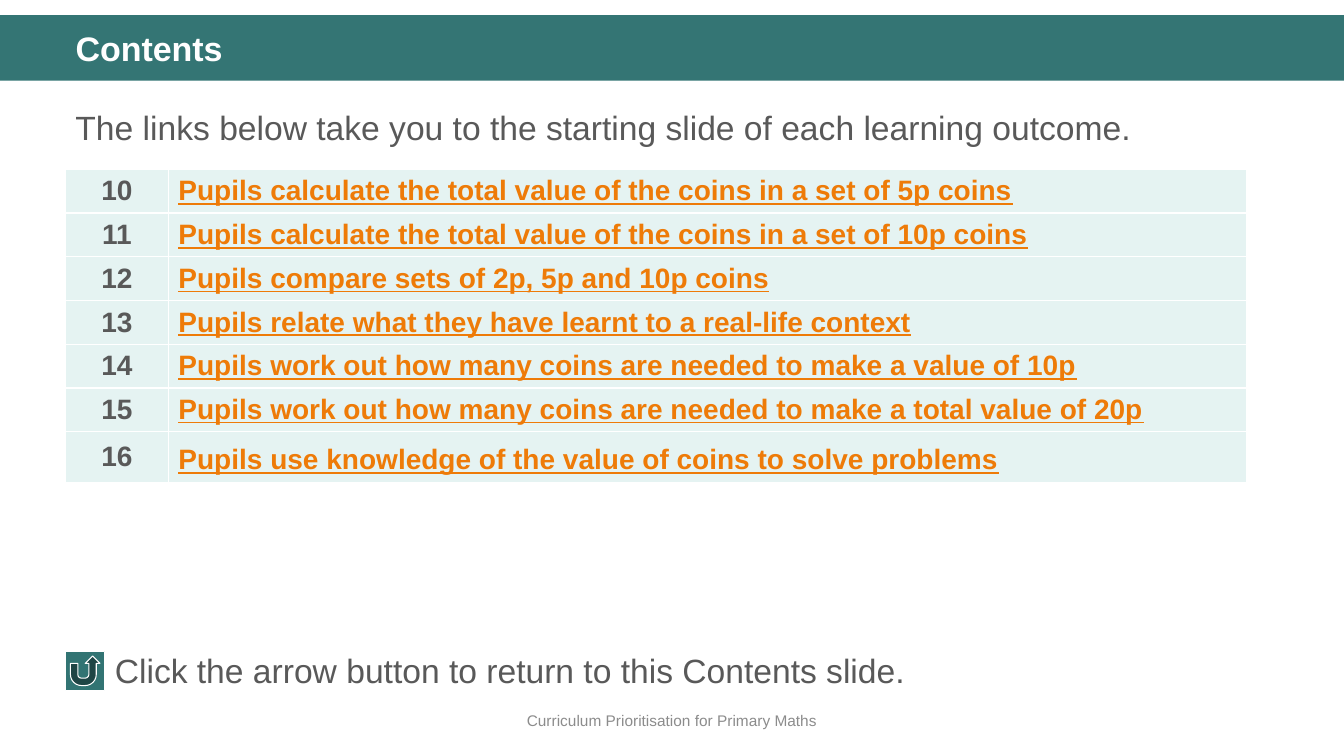
from dataclasses import dataclass

from lxml import etree
from pptx import Presentation
from pptx import util as u
from pptx.dml.color import RGBColor
from pptx.enum import shapes, text
from pptx.oxml import ns


@dataclass(frozen=True)
class Theme:
    font: str = "Arial"
    bar: str = "347574"
    button: str = "327473"
    white: str = "FFFFFF"
    body: str = "595959"
    footer: str = "8C8C8C"
    link: str = "EE7B08"
    cell: str = "E5F3F2"
    title_size: float = 24.3
    body_size: float = 24
    table_size: float = 20
    footer_size: float = 11


THEME = Theme()

OUTCOMES = [
    "Pupils calculate the total value of the coins in a set of 5p coins",
    "Pupils calculate the total value of the coins in a set of 10p coins",
    "Pupils compare sets of 2p, 5p and 10p coins",
    "Pupils relate what they have learnt to a real-life context",
    "Pupils work out how many coins are needed to make a value of 10p",
    "Pupils work out how many coins are needed to make a total value of 20p",
    "Pupils use knowledge of the value of coins to solve problems",
]
FIRST_OUTCOME = 10


def write(frame, words, size, color, bold=False, underline=False,
          align=text.PP_ALIGN.LEFT, spacing=None):
    para = frame.paragraphs[0]
    para.alignment = align
    para.line_spacing = spacing
    span = para.add_run()
    span.text = words
    span.font.name = THEME.font
    span.font.size = u.Pt(size)
    span.font.bold = bold
    span.font.underline = underline
    span.font.color.rgb = RGBColor.from_string(color)


def add_shape(page, kind, place, fill, line=None):
    shape = page.shapes.add_shape(kind, *map(u.Inches, place))
    shape.shadow.inherit = False
    shape.fill.solid()
    shape.fill.fore_color.rgb = RGBColor.from_string(fill)
    if line:
        shape.line.color.rgb = RGBColor.from_string(line)
        shape.line.width = u.Pt(0.75)
    else:
        shape.line.fill.background()
    return shape


def add_label(page, place, words, size, color,
              anchor=text.MSO_ANCHOR.TOP, **style):
    box = page.shapes.add_textbox(*map(u.Inches, place))
    box.text_frame.word_wrap = True
    box.text_frame.vertical_anchor = anchor
    write(box.text_frame, words, size, color, **style)


def set_title(page, place, words):
    title = page.shapes.title
    title.left, title.top, title.width, title.height = map(u.Inches, place)
    title.text_frame.vertical_anchor = text.MSO_ANCHOR.TOP
    write(title.text_frame, words, THEME.title_size, THEME.white,
          bold=True, spacing=0.9)


def style_cell(cell):
    cell.vertical_anchor = text.MSO_ANCHOR.MIDDLE
    props = cell._tc.get_or_add_tcPr()
    for side in ("a:lnL", "a:lnR", "a:lnT", "a:lnB"):
        line = etree.SubElement(props, ns.qn(side), w=str(u.Pt(1)))
        fill = etree.SubElement(line, ns.qn("a:solidFill"))
        etree.SubElement(fill, ns.qn("a:srgbClr"), val=THEME.white)
    cell.fill.solid()
    cell.fill.fore_color.rgb = RGBColor.from_string(THEME.cell)


def add_outcomes(page, left, top, widths, row_height):
    table = page.shapes.add_table(
        len(OUTCOMES), len(widths), u.Inches(left), u.Inches(top),
        u.Inches(sum(widths)), u.Inches(row_height * len(OUTCOMES))).table
    table.first_row = table.horz_banding = False
    for column, width in zip(table.columns, widths):
        column.width = u.Inches(width)
    for index, outcome in enumerate(OUTCOMES):
        table.rows[index].height = u.Inches(row_height)
        number, link = table.cell(index, 0), table.cell(index, 1)
        style_cell(number)
        style_cell(link)
        write(number.text_frame, str(FIRST_OUTCOME + index), THEME.table_size,
              THEME.body, bold=True, align=text.PP_ALIGN.CENTER)
        last = index == len(OUTCOMES) - 1
        write(link.text_frame, outcome, THEME.table_size, THEME.link,
              bold=True, underline=True, spacing=1.2 if last else None)


def main():
    deck = Presentation()
    deck.slide_width, deck.slide_height = u.Inches(13.33), u.Inches(7.5)
    page = deck.slides.add_slide(deck.slide_layouts[5])

    # Title on its bar, with the bar sent to the back
    bar = add_shape(page, shapes.MSO_SHAPE.RECTANGLE,
                    (0, 0.15, 13.33, 0.65), THEME.bar)
    page.shapes._spTree.insert(2, bar._element)
    set_title(page, (0.65, 0.27, 12.18, 0.47), "Contents")

    # Introduction and list of outcomes
    add_label(page, (0.65, 0.93, 12.18, 0.6),
              "The links below take you to the starting slide of each learning outcome.",
              THEME.body_size, THEME.body, spacing=1.2)
    add_outcomes(page, 0.65, 1.68, (1.02, 10.69), 0.41)

    # Return button and its explanation
    add_shape(page, shapes.MSO_SHAPE.ACTION_BUTTON_RETURN,
              (0.65, 6.46, 0.39, 0.39), THEME.button, THEME.white)
    add_label(page, (1.04, 6.4, 11.32, 0.5),
              "Click the arrow button to return to this Contents slide.",
              THEME.body_size, THEME.body)

    # Footer
    add_label(page, (0, 6.95, 13.33, 0.4),
              "Curriculum Prioritisation for Primary Maths",
              THEME.footer_size, THEME.footer,
              anchor=text.MSO_ANCHOR.MIDDLE, align=text.PP_ALIGN.CENTER)

    deck.save("out.pptx")


if __name__ == "__main__":
    main()
